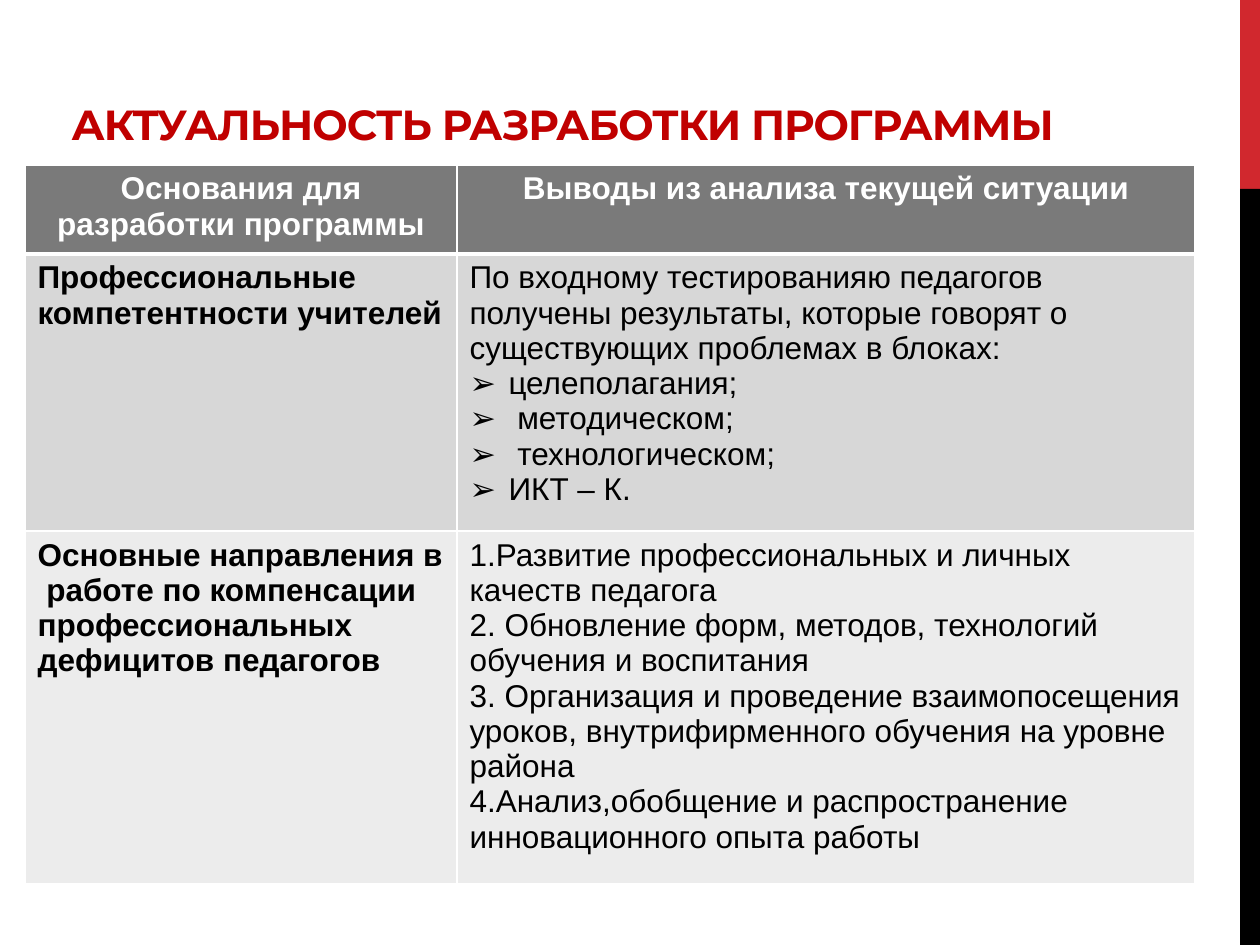
"""Build a slide with a titled table on the grounds for a programme."""
from lxml import etree
from pptx import Presentation
from pptx.dml.color import RGBColor
from pptx.enum.shapes import MSO_SHAPE
from pptx.enum.text import MSO_ANCHOR, PP_ALIGN
from pptx.oxml.ns import qn
from pptx.util import Emu, Pt

RECT = MSO_SHAPE.RECTANGLE
BOTTOM = MSO_ANCHOR.BOTTOM
LEFT, CENTER = PP_ALIGN.LEFT, PP_ALIGN.CENTER
RED = RGBColor(0xD1, 0x28, 0x2E)
DARK = RGBColor(0xC0, 0x00, 0x00)
BLACK = RGBColor(0, 0, 0)
WHITE = RGBColor(0xFF, 0xFF, 0xFF)
FILLS = [RGBColor(0x7A, 0x7A, 0x7A), RGBColor(0xD7, 0xD7, 0xD7), RGBColor(0xEC, 0xEC, 0xEC)]

TITLE = "АКТУАЛЬНОСТЬ РАЗРАБОТКИ ПРОГРАММЫ"
BULLET = "➢"
ROWS = [
    (["Основания для разработки программы"], ["Выводы из анализа текущей ситуации"]),
    (["Профессиональные компетентности учителей"],
     ["По входному тестированияю педагогов получены результаты, которые говорят о "
      "существующих проблемах в блоках:",
      (BULLET, "целеполагания;"),
      (BULLET, " методическом;"),
      (BULLET, " технологическом;"),
      (BULLET, "ИКТ – К.")]),
    (["Основные направления в  работе по компенсации профессиональных дефицитов педагогов"],
     ["1.Развитие профессиональных и личных качеств педагога",
      "2. Обновление форм, методов, технологий обучения и воспитания",
      "3. Организация и проведение взаимопосещения уроков, внутрифирменного обучения "
      "на уровне района",
      "4.Анализ,обобщение и распространение инновационного опыта работы"]),
]
BARS = [(0, 189, RED), (189, 756, BLACK)]
WIDTHS = [432, 738]
HEIGHTS = [89, 205, 280]
INDENT = 39


def px(size):
    return Emu(round(size * 914400 / 126))


def style(run, size, face, color, bold):
    font = run.font
    font.size, font.name, font.bold = Pt(size), face, bold
    font.color.rgb = color


def add_bar(slide, top, height, color):
    bar = slide.shapes.add_shape(RECT, px(1240), px(top), px(20), px(height))
    bar.shadow.inherit = False
    bar.fill.solid()
    bar.fill.fore_color.rgb = color
    bar.line.fill.background()


def add_title(slide):
    box = slide.shapes.add_textbox(px(59), px(57), px(1138), px(98))
    frame = box.text_frame
    frame.word_wrap = True
    frame.vertical_anchor = BOTTOM
    frame.text = TITLE
    run = frame.paragraphs[0].runs[0]
    style(run, 24, "Montserrat", DARK, True)
    run.font._element.set("spc", "-60")


def add_edges(cell, row):
    props = cell._tc.get_or_add_tcPr()
    widths = {"lnL": 1, "lnR": 1, "lnT": 3 if row == 1 else 1, "lnB": 3 if row == 0 else 1}
    for tag, width in widths.items():
        edge = etree.SubElement(props, qn("a:" + tag), w=str(Pt(width)))
        fill = etree.SubElement(edge, qn("a:solidFill"))
        etree.SubElement(fill, qn("a:srgbClr"), val=str(WHITE))


def add_bullet(para, mark):
    props = para._p.get_or_add_pPr()
    props.set("marL", str(px(INDENT)))
    props.set("indent", str(-px(INDENT)))
    etree.SubElement(props, qn("a:buFont"), typeface="Arial")
    etree.SubElement(props, qn("a:buChar"), char=mark)


def fill_cell(cell, row, col, items):
    add_edges(cell, row)
    cell.fill.solid()
    cell.fill.fore_color.rgb = FILLS[row]
    frame = cell.text_frame
    for i, item in enumerate(items):
        para = frame.add_paragraph() if i else frame.paragraphs[0]
        mark, text = item if isinstance(item, tuple) else (None, item)
        para.text = text
        para.alignment = LEFT if row else CENTER
        style(para.runs[0], 18, "Arial", BLACK if row else WHITE, row == 0 or col == 0)
        if mark:
            add_bullet(para, mark)


def add_grid(slide):
    shape = slide.shapes.add_table(len(ROWS), len(WIDTHS), px(25), px(165),
                                   px(sum(WIDTHS)), px(719))
    table = shape.table
    for col, width in zip(table.columns, WIDTHS):
        col.width = px(width)
    for r, (height, cells) in enumerate(zip(HEIGHTS, ROWS)):
        table.rows[r].height = px(height)
        for c, items in enumerate(cells):
            fill_cell(table.cell(r, c), r, c, items)


def main():
    deck = Presentation()
    deck.slide_width, deck.slide_height = px(1260), px(945)
    slide = deck.slides.add_slide(deck.slide_layouts[6])
    for bar in BARS:
        add_bar(slide, *bar)
    add_title(slide)
    add_grid(slide)
    deck.save("out.pptx")


if __name__ == "__main__":
    main()
